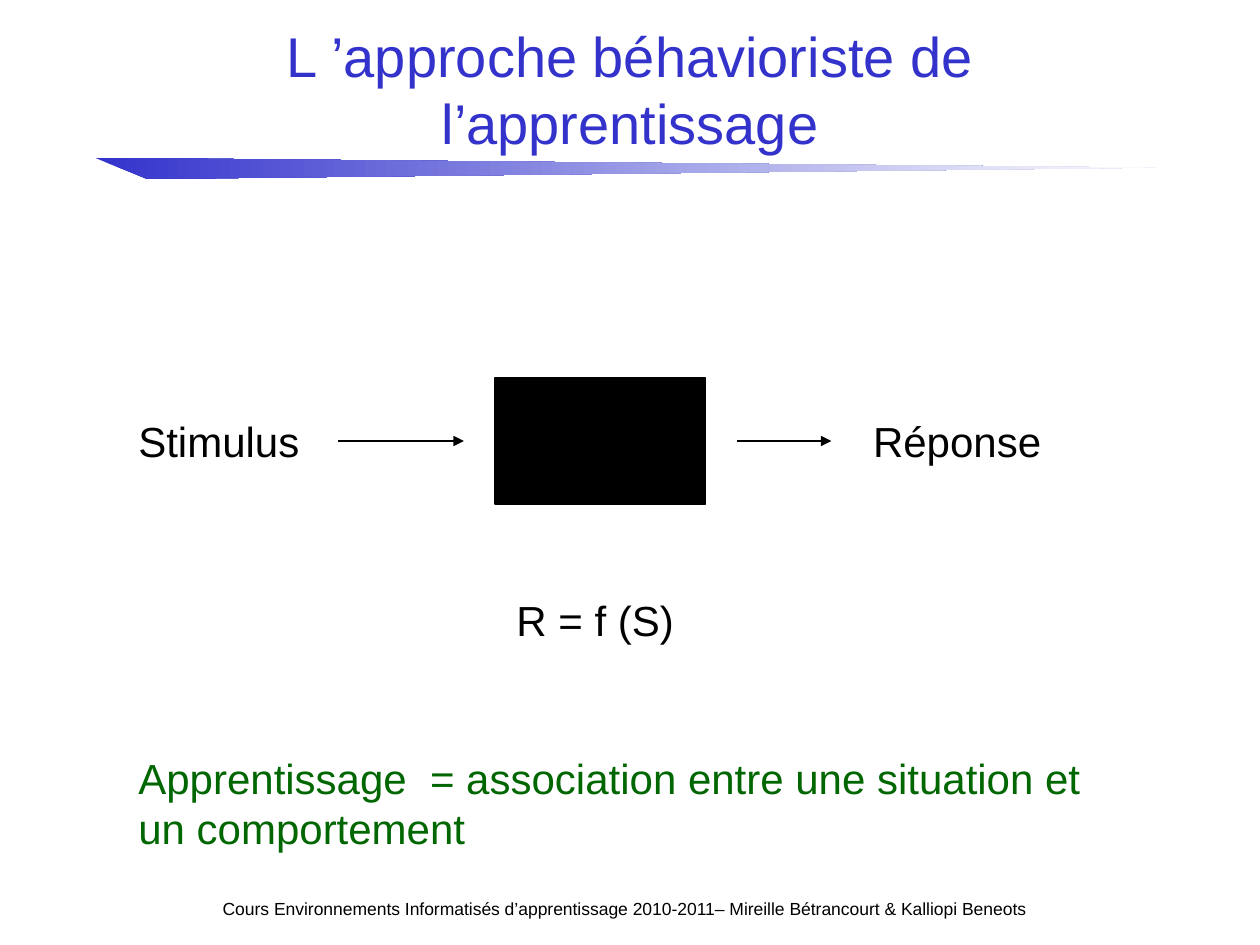
from dataclasses import dataclass

from lxml.etree import SubElement
from pptx import Presentation
from pptx.dml.color import RGBColor
from pptx.enum.shapes import MSO_CONNECTOR, MSO_SHAPE
from pptx.enum.text import MSO_ANCHOR, MSO_AUTO_SIZE, PP_ALIGN
from pptx.oxml.ns import qn
from pptx.util import Cm, Pt


@dataclass(frozen=True)
class Theme:
    font: str = "Arial"
    ink: RGBColor = RGBColor(0x00, 0x00, 0x00)
    paper: RGBColor = RGBColor(0xFF, 0xFF, 0xFF)
    accent: RGBColor = RGBColor(0x33, 0x33, 0xCC)
    conclusion: RGBColor = RGBColor(0x00, 0x66, 0x00)
    title_size: int = 32
    body_size: int = 24
    footer_size: int = 10
    line_width: float = 0.75


class SlideBuilder:
    def __init__(self, page, theme):
        self.page = page
        self.theme = theme

    def text(self, words, left, top, width, height, size=None, color=None, frame_format=None, align=None):
        box = self.page.shapes.add_textbox(Cm(left), Cm(top), Cm(width), Cm(height))
        frame = box.text_frame
        for name, value in {"word_wrap": True, **(frame_format or {})}.items():
            setattr(frame, name, value)
        para = frame.paragraphs[0]
        para.alignment = align
        span = para.add_run()
        span.text = words
        font_format = {"name": self.theme.font, "size": Pt(size or self.theme.body_size)}
        for name, value in font_format.items():
            setattr(span.font, name, value)
        span.font.color.rgb = color or self.theme.ink

    def label(self, words, left, top, width):
        fitted = {"word_wrap": False, "auto_size": MSO_AUTO_SIZE.SHAPE_TO_FIT_TEXT}
        self.text(words, left, top, width, 1.27, frame_format=fitted)

    def wedge(self, points):
        corners = [(Cm(x), Cm(y)) for x, y in points]
        outline = self.page.shapes.build_freeform(*corners[0])
        outline.add_line_segments(corners[1:], close=True)
        shape = outline.convert_to_shape()
        shape.shadow.inherit = False
        shape.line.fill.background()
        shape.fill.gradient()
        shape.fill.gradient_angle = 0
        colors = (self.theme.accent, self.theme.paper)
        for position, (stop, color) in enumerate(zip(shape.fill.gradient_stops, colors)):
            stop.position = position
            stop.color.rgb = color

    def black_box(self, left, top, width, height):
        shape = self.page.shapes.add_shape(
            MSO_SHAPE.RECTANGLE, Cm(left), Cm(top), Cm(width), Cm(height)
        )
        shape.shadow.inherit = False
        shape.fill.solid()
        shape.fill.fore_color.rgb = self.theme.ink
        self.stroke(shape.line)

    def arrow(self, start, end, height):
        connector = self.page.shapes.add_connector(
            MSO_CONNECTOR.STRAIGHT, Cm(start), Cm(height), Cm(end), Cm(height)
        )
        self.stroke(connector.line)
        SubElement(connector.line._get_or_add_ln(), qn("a:tailEnd"), type="triangle")
        SubElement(connector._element.spPr, qn("a:effectLst"))

    def stroke(self, line):
        line.color.rgb = self.theme.ink
        line.width = Pt(self.theme.line_width)


def main():
    deck = Presentation()
    for name, value in {"slide_width": Cm(25.4), "slide_height": Cm(19.05)}.items():
        setattr(deck, name, value)
    theme = Theme()
    builder = SlideBuilder(deck.slides.add_slide(deck.slide_layouts[6]), theme)

    builder.wedge([(1.91, 3.18), (2.97, 3.61), (23.29, 3.38)])
    builder.text(
        "L ’approche béhavioriste de l’apprentissage", 1.91, 0.2, 21.59, 3.18,
        size=theme.title_size, color=theme.accent, align=PP_ALIGN.CENTER,
        frame_format={"vertical_anchor": MSO_ANCHOR.MIDDLE},
    )

    axis = 8.89
    builder.black_box(9.98, axis - 1.27, 4.24, 2.54)
    for start, end in ((6.81, 9.35), (14.86, 16.76)):
        builder.arrow(start, end, axis)
    for words, left, top, width in (
        ("Stimulus", 2.54, 8.26, 3.76),
        ("Réponse", 17.35, 8.26, 3.91),
        ("R = f (S)", 10.16, 11.86, 3.68),
    ):
        builder.label(words, left, top, width)

    builder.text(
        "Apprentissage  = association entre une situation et un comportement",
        2.54, 15.04, 20.52, 2.29, color=theme.conclusion,
        frame_format={"auto_size": MSO_AUTO_SIZE.SHAPE_TO_FIT_TEXT},
    )
    builder.text(
        "Cours Environnements Informatisés d’apprentissage 2010-2011"
        "– Mireille Bétrancourt & Kalliopi Beneots",
        4.24, 17.98, 21.59, 1.27, size=theme.footer_size,
    )
    deck.save("out.pptx")


if __name__ == "__main__":
    main()
